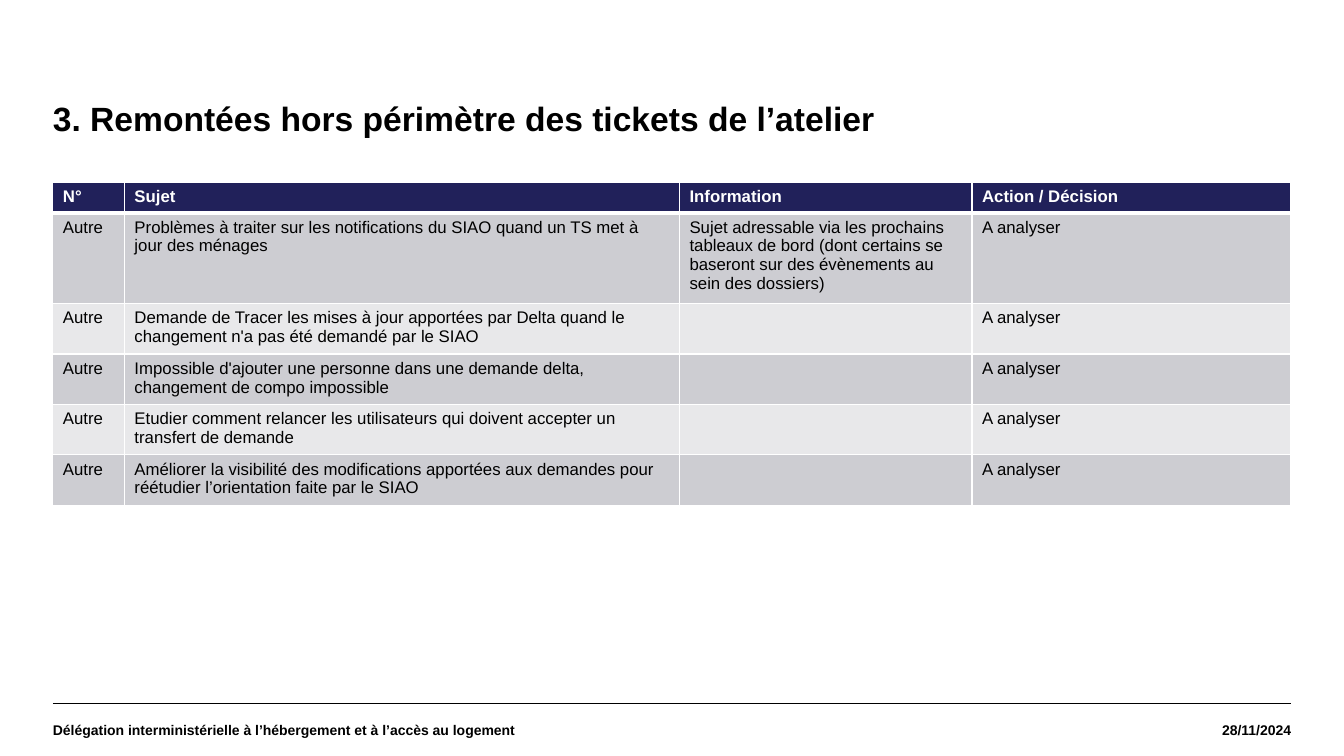
import lxml.etree
import pptx
import pptx.dml.color
import pptx.enum.shapes
import pptx.enum.text
import pptx.oxml.ns
import pptx.util

Pt = pptx.util.Pt
RGBColor = pptx.dml.color.RGBColor
qn = pptx.oxml.ns.qn
Anchor = pptx.enum.text.MSO_ANCHOR
Align = pptx.enum.text.PP_ALIGN

BLACK = RGBColor(0x00, 0x00, 0x00)
WHITE = RGBColor(0xFF, 0xFF, 0xFF)
NAVY = RGBColor(0x21, 0x21, 0x5A)
GREY = RGBColor(0xCD, 0xCD, 0xD2)
LIGHT_GREY = RGBColor(0xE8, 0xE8, 0xEA)

LEFT, WIDTH = 37.8, 884.4
RIGHT = LEFT + WIDTH
FOOTER_TOP, FOOTER_HEIGHT = 502.5, 37.5
COLUMN_WIDTHS = [51.1, 396.5, 209, 227.8]
ROW_HEIGHTS = [20.2, 61.2, 34.1, 34.1, 34.1, 34.1]

HEADINGS = ["N°", "Sujet", "Information", "Action / Décision"]
REPORTS = [
    ("Problèmes à traiter sur les notifications du SIAO quand un TS met à jour des ménages",
     "Sujet adressable via les prochains tableaux de bord (dont certains se baseront "
     "sur des évènements au sein des dossiers)"),
    ("Demande de Tracer les mises à jour apportées par Delta quand le changement "
     "n'a pas été demandé par le SIAO", ""),
    ("Impossible d'ajouter une personne dans une demande delta, changement de compo impossible", ""),
    ("Etudier comment relancer les utilisateurs qui doivent accepter un transfert de demande", ""),
    ("Améliorer la visibilité des modifications apportées aux demandes pour réétudier "
     "l’orientation faite par le SIAO", ""),
]


def write_text(frame, text, size=12, color=BLACK, bold=False, align=Align.LEFT, spacing=None):
    paragraph = frame.paragraphs[0]
    paragraph.text = text
    paragraph.alignment = align
    if spacing:
        paragraph.line_spacing = spacing
    font = paragraph.font
    font.name, font.size, font.bold = "Arial", Pt(size), bold
    font.color.rgb = color


def add_label(slide, text, left, top, width, height, anchor=Anchor.TOP, **text_format):
    frame = slide.shapes.add_textbox(Pt(left), Pt(top), Pt(width), Pt(height)).text_frame
    frame.word_wrap = True
    frame.vertical_anchor = anchor
    frame.margin_left = frame.margin_top = frame.margin_right = frame.margin_bottom = 0
    write_text(frame, text, **text_format)


def add_rule(slide, left, right, y):
    rule = slide.shapes.add_connector(
        pptx.enum.shapes.MSO_CONNECTOR.STRAIGHT, Pt(left), Pt(y), Pt(right), Pt(y))
    rule.line.color.rgb = BLACK
    rule.line.width = Pt(0.8)
    lxml.etree.SubElement(rule.element.spPr, qn("a:effectLst"))


def set_borders(cell, top, bottom):
    properties = cell._tc.get_or_add_tcPr()
    for side, width in (("lnL", 1), ("lnR", 1), ("lnT", top), ("lnB", bottom)):
        border = lxml.etree.SubElement(properties, qn(f"a:{side}"), w=str(Pt(width)))
        fill = lxml.etree.SubElement(border, qn("a:solidFill"))
        lxml.etree.SubElement(fill, qn("a:srgbClr"), val=str(WHITE))


def add_reports_table(slide, rows, left, top):
    table = slide.shapes.add_table(
        len(rows), len(COLUMN_WIDTHS), Pt(left), Pt(top), Pt(WIDTH), Pt(sum(ROW_HEIGHTS))).table
    for column, width in zip(table.columns, COLUMN_WIDTHS):
        column.width = Pt(width)
    for index, (row, height, texts) in enumerate(zip(table.rows, ROW_HEIGHTS, rows)):
        row.height = Pt(height)
        heading = index == 0
        background = NAVY if heading else (LIGHT_GREY, GREY)[index % 2]
        for cell, text in zip(row.cells, texts):
            set_borders(cell, top=3 if index == 1 else 1, bottom=3 if heading else 1)
            cell.fill.solid()
            cell.fill.fore_color.rgb = background
            write_text(cell.text_frame, text, color=WHITE if heading else BLACK, bold=heading)


def main():
    deck = pptx.Presentation()
    deck.slide_width, deck.slide_height = Pt(960), Pt(540)
    slide = deck.slides.add_slide(deck.slide_layouts[6])

    add_rule(slide, LEFT, RIGHT, FOOTER_TOP)
    add_label(slide, "3. Remontées hors périmètre des tickets de l’atelier",
              LEFT, 73.4, WIDTH, 75.6, size=24, bold=True, spacing=0.9)
    date_width = 123
    add_label(slide, "28/11/2024", RIGHT - date_width, FOOTER_TOP, date_width, FOOTER_HEIGHT,
              anchor=Anchor.MIDDLE, size=10, bold=True, align=Align.RIGHT)
    add_label(slide, "Délégation interministérielle à l’hébergement et à l’accès au logement",
              LEFT, FOOTER_TOP, 620, FOOTER_HEIGHT, anchor=Anchor.MIDDLE, size=10, bold=True)

    rows = [HEADINGS] + [["Autre", subject, information, "A analyser"]
                         for subject, information in REPORTS]
    add_reports_table(slide, rows, LEFT, 130.3)
    deck.save("out.pptx")


if __name__ == "__main__":
    main()
